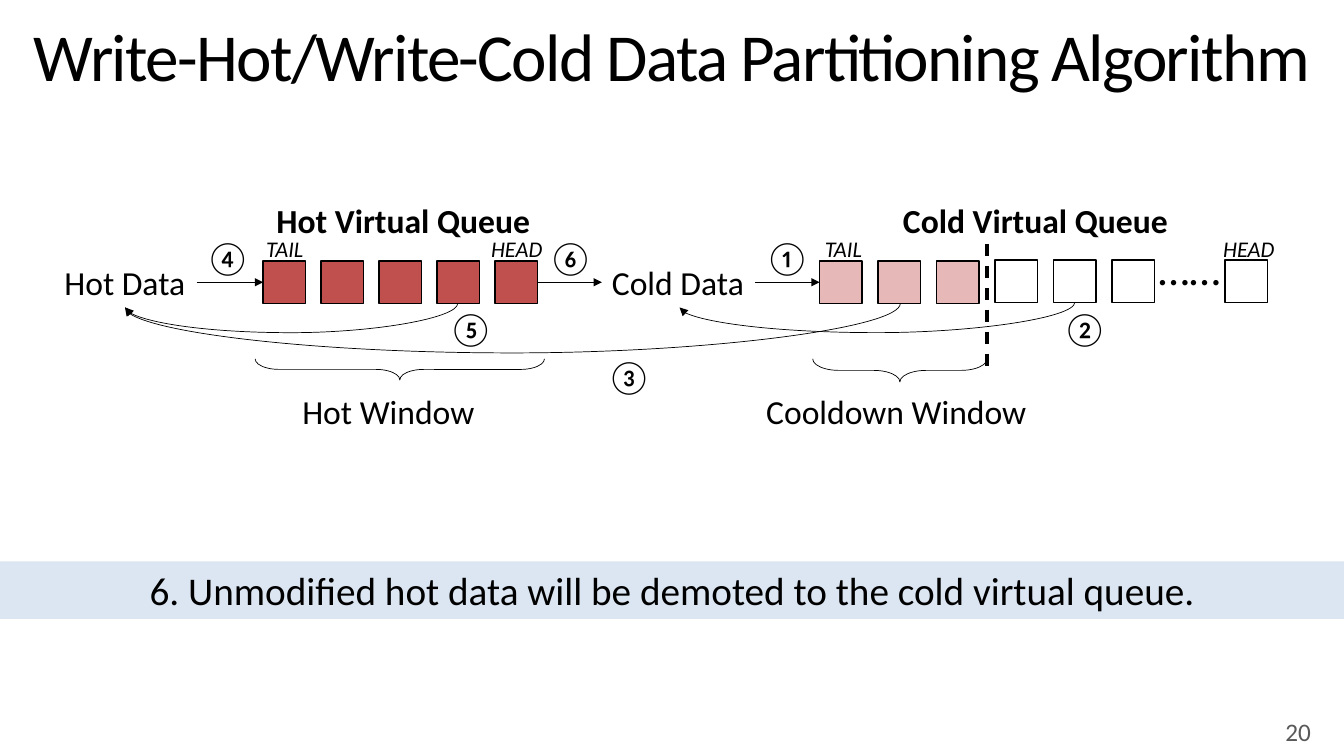
from dataclasses import dataclass

from lxml.etree import SubElement
from pptx import Presentation
from pptx.dml.color import RGBColor
from pptx.enum.dml import MSO_LINE
from pptx.enum.shapes import MSO_CONNECTOR, MSO_SHAPE
from pptx.enum.text import MSO_ANCHOR, MSO_AUTO_SIZE, PP_ALIGN
from pptx.oxml.ns import qn
from pptx.util import Inches, Pt

COLUMNS, ROWS = 133.3, 75
TOP, LEFT, BOTTOM, RIGHT = range(4)


@dataclass(frozen=True)
class Theme:
    font: str = "Calibri"
    ink: str = "000000"
    hot: str = "C0504D"
    cooling: str = "E6B9B8"
    cold: str = "FFFFFF"
    band: str = "DCE6F2"
    muted: str = "595959"
    title: int = 48
    dots: int = 32
    message: int = 28
    label: int = 24
    number: int = 18
    marker: int = 16
    thin: float = 0.5
    outline: float = 1
    divider: float = 2.25


class SlideBuilder:
    """Draws on one slide, with lengths in grid columns and rows."""

    def __init__(self, presentation, theme):
        self.theme = theme
        self.slide = presentation.slides.add_slide(presentation.slide_layouts[6])
        self.column = presentation.slide_width / COLUMNS
        self.row = presentation.slide_height / ROWS

    def place(self, x, y, *more):
        """Turn column and row pairs into slide lengths."""
        units = (self.column, self.row) * 2
        return [round(value * unit) for value, unit in zip((x, y, *more), units)]

    def fill_text(self, shape, text, size, color=None, align=PP_ALIGN.LEFT,
                  anchor=MSO_ANCHOR.TOP, wrap=True, bold=False, italic=False):
        frame = shape.text_frame
        frame.word_wrap = wrap
        frame.vertical_anchor = anchor
        paragraph = frame.paragraphs[0]
        paragraph.alignment = align
        run = paragraph.add_run()
        run.text = text
        font = run.font
        font.name, font.size = self.theme.font, Pt(size)
        font.bold, font.italic = bold, italic
        font.color.rgb = RGBColor.from_string(color or self.theme.ink)
        return paragraph

    def text(self, box, text, size, **style):
        shape = self.slide.shapes.add_textbox(*self.place(*box))
        self.fill_text(shape, text, size, **style)
        return shape

    def label(self, x, y, width, height, text, size=None, **style):
        """A one-line label whose box fits its text."""
        shape = self.text((x, y, width, height), text, size or self.theme.label,
                          wrap=False, **style)
        shape.text_frame.auto_size = MSO_AUTO_SIZE.SHAPE_TO_FIT_TEXT
        return shape

    def title(self, box, text):
        shape = self.text(box, text, self.theme.title,
                          align=PP_ALIGN.CENTER, anchor=MSO_ANCHOR.MIDDLE)
        paragraph = shape.text_frame.paragraphs[0]
        paragraph.line_spacing = 0.9
        paragraph.runs[0].font._element.set("spc", "-120")

    def rectangle(self, box, fill, outlined=True):
        shape = self.slide.shapes.add_shape(MSO_SHAPE.RECTANGLE, *self.place(*box))
        shape.shadow.inherit = False
        shape.fill.solid()
        shape.fill.fore_color.rgb = RGBColor.from_string(fill)
        if outlined:
            self.stroke(shape.line, self.theme.outline)
        else:
            shape.line.fill.background()
        return shape

    def queue(self, x, y, count, pitch, fill, side=4.2):
        """A row of equal squares; returns them from tail to head."""
        return [self.rectangle((x + pitch * index, y, side, side), fill)
                for index in range(count)]

    def brace(self, x, y, width, depth):
        """A brace that opens upward, a right brace turned a quarter."""
        left = x + (width - depth) / 2
        top = y + (depth - width) / 2
        shape = self.slide.shapes.add_shape(
            MSO_SHAPE.RIGHT_BRACE, *self.place(left, top, depth, width))
        shape.rotation = 90
        shape.adjustments[0], shape.adjustments[1] = 1.13, 0.5
        shape.shadow.inherit = False
        shape.fill.background()
        self.stroke(shape.line, self.theme.thin)

    def stroke(self, line, width):
        line.color.rgb = RGBColor.from_string(self.theme.ink)
        line.width = Pt(width)

    def connector(self, kind, start, end, width, arrow=True):
        connector = self.slide.shapes.add_connector(
            kind, *self.place(*start), *self.place(*end))
        self.stroke(connector.line, width)
        if arrow:
            outline = connector._element.spPr.find(qn("a:ln"))
            SubElement(outline, qn("a:tailEnd"), type="triangle")
        SubElement(connector._element.spPr, qn("a:effectLst"))
        return connector

    def arrow(self, source, target):
        """A straight arrow from a right side to a left side."""
        connector = self.connector(MSO_CONNECTOR.STRAIGHT, (0, 0), (1, 1), self.theme.thin)
        connector.begin_connect(source, RIGHT)
        connector.end_connect(target, LEFT)

    def divider(self, x, top, bottom):
        connector = self.connector(MSO_CONNECTOR.STRAIGHT, (x, top), (x, bottom),
                                   self.theme.divider, arrow=False)
        connector.line.dash_style = MSO_LINE.DASH

    def return_arrow(self, start, end, sag):
        """A curve that hangs below its ends and runs to the left."""
        (x1, y1), (x2, y2) = start, end
        middle_x, middle_y = (x1 + x2) / 2, (y1 + y2) / 2
        half_run, half_rise = (x1 - x2) / 2, (y2 - y1) / 2
        connector = self.connector(
            MSO_CONNECTOR.CURVE,
            (middle_x - half_rise, middle_y - half_run),
            (middle_x + half_rise, middle_y + half_run), self.theme.thin)
        properties = connector._element.spPr
        properties.find(qn("a:xfrm")).set("rot", "5400000")
        guides = properties.find(qn("a:prstGeom")).find(qn("a:avLst"))
        bend = round(sag / (y2 - y1) * 100000)
        SubElement(guides, qn("a:gd"), name="adj1", fmla=f"val {bend}")


def main():
    presentation = Presentation()
    presentation.slide_width, presentation.slide_height = Inches(13.33), Inches(7.5)
    theme = Theme()
    builder = SlideBuilder(presentation, theme)

    builder.title((0, 0, COLUMNS, 11.9), "Write-Hot/Write-Cold Data Partitioning Algorithm")

    # Queues of data blocks
    hot = builder.queue(26.1, 25.9, 5, 5.75, theme.hot)
    cooling = builder.queue(81.3, 25.9, 3, 5.8, theme.cooling)
    builder.queue(98.7, 25.8, 3, 5.8, theme.cold)
    builder.queue(121.5, 25.8, 1, 5.8, theme.cold)
    builder.label(113.9, 23.4, 8.2, 6.4, "……", theme.dots)
    builder.divider(97.9, 24.2, 36.8)

    # Queue names and ends
    for x, width, name in ((26.3, 27.4, "Hot Virtual Queue"), (88.4, 28.6, "Cold Virtual Queue")):
        builder.label(x, 19.3, width, 5, name, bold=True, align=PP_ALIGN.CENTER)
    for x, width, end in ((25.4, 5.7, "TAIL"), (47.3, 7.9, "HEAD"),
                          (80.8, 5.7, "TAIL"), (119.9, 7.9, "HEAD")):
        builder.label(x, 22.8, width, 3.7, end, theme.marker,
                      italic=True, align=PP_ALIGN.CENTER)

    # Windows
    for x, width, depth in ((25.3, 28.7, 2.1), (80.6, 17.3, 2.3)):
        builder.brace(x, 35.6, width, depth)
    builder.label(29, 38.3, 19.2, 5, "Hot Window")
    builder.label(75, 38.3, 28.8, 5, "Cooldown Window")

    # Data sources and the arrows between them
    hot_data = builder.label(5.4, 25.5, 14.1, 5, "Hot Data")
    cold_data = builder.label(59.7, 25.5, 15.2, 5, "Cold Data")
    for source, target in ((hot_data, hot[0]), (hot[-1], cold_data), (cold_data, cooling[0])):
        builder.arrow(source, target)
    for start, end, sag in (((45.4, 30.1), (12.4, 30.5), 2.9),
                            ((89.3, 30.1), (12.4, 30.5), 4.9),
                            ((106.6, 30), (67.4, 30.5), 3)):
        builder.return_arrow(start, end, sag)

    # Step numbers
    for x, y, step in ((74.9, 23, "①"), (104.4, 30.1, "②"), (59.2, 34.8, "③"),
                       (19.4, 23, "④"), (43.5, 30.1, "⑤"), (53.4, 23, "⑥")):
        builder.label(x, y, 6.5, 5, step)

    # Message band and page number
    band = builder.rectangle((0, 55.7, COLUMNS, 5.7), theme.band, outlined=False)
    builder.fill_text(band, "6. Unmodified hot data will be demoted to the cold virtual queue.",
                      theme.message, align=PP_ALIGN.CENTER)
    builder.text((101, 70.6, 30, 4), "20", theme.number, color=theme.muted,
                 align=PP_ALIGN.RIGHT, anchor=MSO_ANCHOR.MIDDLE)

    presentation.save("out.pptx")


if __name__ == "__main__":
    main()
